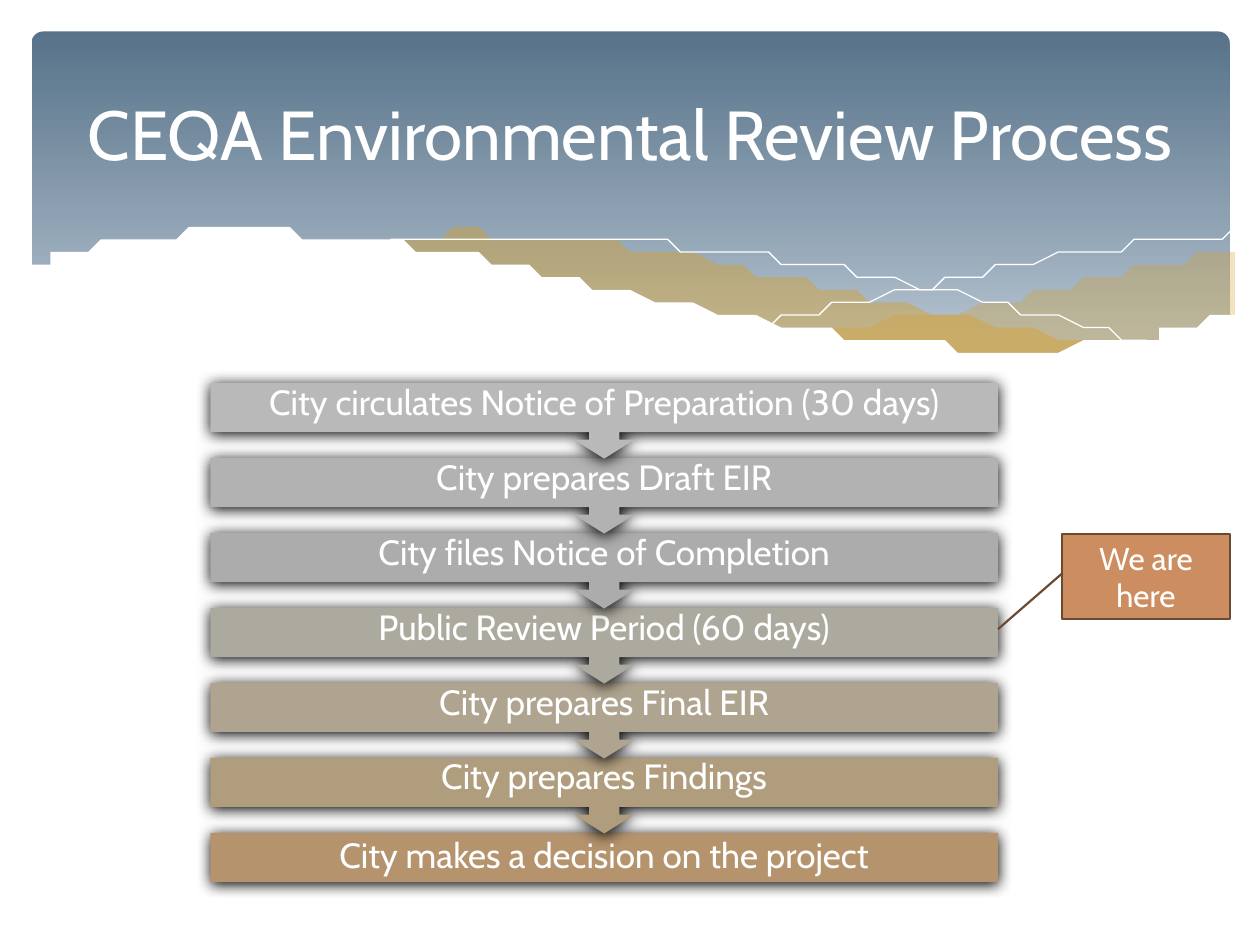
import lxml.etree
import pptx
import pptx.dml.color
import pptx.enum.shapes
import pptx.enum.text
import pptx.oxml.ns
import pptx.util

RGBColor = pptx.dml.color.RGBColor
Shape = pptx.enum.shapes.MSO_SHAPE

WHITE = RGBColor(0xFF, 0xFF, 0xFF)
SKY_TOP = RGBColor(0x57, 0x72, 0x89)
SKY_BOTTOM = RGBColor(0xB2, 0xC1, 0xCE)
GOLD = RGBColor(0xDC, 0x9E, 0x1F)
CALLOUT_FILL = RGBColor(0xCC, 0x8E, 0x60)
CALLOUT_LINE = RGBColor(0x6B, 0x4A, 0x32)

# The grid has 100 columns and 75 rows of 0.1 inch
COLUMNS, ROWS = 100, 75
UNIT = pptx.util.Inches(0.1)

STEPS = [
    ("City circulates Notice of Preparation (30 days)", RGBColor(0xB9, 0xB9, 0xB9)),
    ("City prepares Draft EIR", RGBColor(0xB2, 0xB2, 0xB2)),
    ("City files Notice of Completion", RGBColor(0xAC, 0xAC, 0xAC)),
    ("Public Review Period (60 days)", RGBColor(0xAC, 0xA9, 0x9E)),
    ("City prepares Final EIR", RGBColor(0xAE, 0xA4, 0x8F)),
    ("City prepares Findings", RGBColor(0xB0, 0x9D, 0x7E)),
    ("City makes a decision on the project", RGBColor(0xB4, 0x93, 0x6D)),
]
STEP_LEFT, STEP_TOP, STEP_WIDTH = 16.7, 30.4, 62.5
STEP_PITCH, STEP_HEIGHT, BOX_HEIGHT = 5.95, 6, 3.9

# Knots of the wave curves, in columns and rows
RIGHT_BAND_TOP = [(97.6, 20), (92.1, 21), (86.1, 22.3), (77.9, 24.2), (66.1, 26.5)]
RIGHT_BAND_BOTTOM = [(66.1, 26.5), (73.2, 27.4), (80.3, 27.8), (87.2, 27.4),
                     (92.8, 26.3), (97.6, 24.7)]
LEFT_BAND_TOP = [(89.3, 27.3), (80.7, 26), (70.6, 24), (62.9, 22.2), (55.5, 20.5),
                 (48.9, 19.4), (42, 18.7), (36.1, 18.5), (28.6, 19.1)]
LEFT_BAND_BOTTOM = [(28.6, 19.1), (36.2, 20.3), (44.9, 22.2), (53, 24), (61.8, 25.8),
                    (69.5, 27), (77.3, 27.7), (83.8, 27.8), (89.3, 27.3)]
FALLING_LINE = [(30.9, 19.5), (36.3, 18.9), (43.3, 18.7), (51, 19.2), (60.8, 20.4),
                (69.5, 21.9), (79.5, 24.1), (90.7, 27.2)]
RISING_LINE = [(61.3, 25.7), (69.5, 23.5), (77.6, 21.6), (86.6, 19.9), (92.4, 19),
               (97.5, 18.5)]
GROUND_EDGE = [(2.3, 21.3), (5.9, 19.9), (11.9, 18.7), (19.3, 18.4), (27.1, 18.8),
               (36.5, 20.2), (44.7, 22), (52.9, 23.9), (60.3, 25.4), (68.8, 26.8),
               (76.1, 27.5), (82.3, 27.7), (88.7, 27.1), (93, 26.2), (97.7, 24.6)]
GROUND_CORNERS = [(97.7, 32.9), (2.3, 32.9)]


def smooth(knots, parts=6):
    """Sample a Catmull-Rom curve through the knots."""
    padded = [knots[0], *knots, knots[-1]]
    points = [knots[0]]
    for a, b, c, d in zip(padded, padded[1:], padded[2:], padded[3:]):
        for step in range(1, parts + 1):
            t = step / parts
            points.append(tuple(
                q + t * ((r - p) + t * ((2 * p - 5 * q + 4 * r - s)
                                        + t * (3 * q - p - 3 * r + s))) / 2
                for p, q, r, s in zip(a, b, c, d)))
    return points


def add_xml(parent, tag, **attributes):
    return lxml.etree.SubElement(parent, pptx.oxml.ns.qn(tag), attributes)


class SlideBuilder:
    font = "Cabin"

    def __init__(self, presentation):
        self.slide = presentation.slides.add_slide(presentation.slide_layouts[5])
        self.shapes = self.slide.shapes

    def place(self, shape, left, top, width, height):
        shape.left, shape.top = round(left * UNIT), round(top * UNIT)
        shape.width, shape.height = round(width * UNIT), round(height * UNIT)

    def set_text(self, shape, text, size):
        frame = shape.text_frame
        frame.text = text
        frame.word_wrap = True
        frame.vertical_anchor = pptx.enum.text.MSO_ANCHOR.MIDDLE
        paragraph = frame.paragraphs[0]
        paragraph.alignment = pptx.enum.text.PP_ALIGN.CENTER
        paragraph.font.name = self.font
        paragraph.font.size = pptx.util.Pt(size)
        paragraph.font.color.rgb = WHITE
        return paragraph

    def title(self, text, *box):
        title = self.shapes.title
        self.place(title, *box)
        self.set_text(title, text, 39.6)
        # Bring the title in front of the backdrop
        self.shapes._spTree.append(title._element)

    def box(self, kind, position, adjustments=()):
        shape = self.shapes.add_shape(kind, 0, 0, 0, 0)
        self.place(shape, *position)
        for index, value in enumerate(adjustments):
            shape.adjustments[index] = value
        shape.shadow.inherit = False
        shape.line.fill.background()
        return shape

    def gradient_panel(self, *position):
        fill = self.box(Shape.ROUNDED_RECTANGLE, position, [0.034]).fill
        fill.gradient()
        fill.gradient_angle = 270
        for stop, color, share in zip(fill.gradient_stops, (SKY_TOP, SKY_BOTTOM), (0, 0.9)):
            stop.color.rgb = color
            stop.position = share

    def outline(self, points, closed):
        builder = self.shapes.build_freeform(*points[0], scale=UNIT)
        builder.add_line_segments(points[1:], close=closed)
        shape = builder.convert_to_shape()
        shape.shadow.inherit = False
        return shape

    def area(self, points, color, opacity=100):
        shape = self.outline(points, True)
        shape.line.fill.background()
        shape.fill.solid()
        shape.fill.fore_color.rgb = color
        if opacity < 100:
            color_node = shape._element.spPr.find(".//" + pptx.oxml.ns.qn("a:srgbClr"))
            add_xml(color_node, "a:alpha", val=str(opacity * 1000))

    def hairline(self, knots):
        shape = self.outline(smooth(knots), False)
        shape.fill.background()
        shape.line.color.rgb = WHITE
        shape.line.width = 0

    def step(self, text, color, top, last):
        if last:
            shape = self.box(Shape.RECTANGLE, (STEP_LEFT, top, STEP_WIDTH, BOX_HEIGHT))
        else:
            shape = self.box(Shape.DOWN_ARROW_CALLOUT,
                             (STEP_LEFT, top, STEP_WIDTH, STEP_HEIGHT),
                             [0.4, 0.4, 0.25, BOX_HEIGHT / STEP_HEIGHT])
        shape.fill.solid()
        shape.fill.fore_color.rgb = color
        self.set_text(shape, text, 20).line_spacing = 0.9
        frame = shape.text_frame
        frame.margin_left = frame.margin_right = frame.margin_top = pptx.util.Inches(0.12)
        frame.margin_bottom = pptx.util.Inches(0.12 if last else 0.18)
        effects = shape._element.spPr.find(pptx.oxml.ns.qn("a:effectLst"))
        shadow = add_xml(effects, "a:outerShdw", blurRad=str(pptx.util.Pt(8.5)),
                         dist=str(pptx.util.Pt(1)), dir="5400000", rotWithShape="0")
        add_xml(shadow, "a:srgbClr", val="000000")

    def callout(self, text, position, pointer):
        shape = self.box(Shape.LINE_CALLOUT_1, position, pointer)
        shape.fill.solid()
        shape.fill.fore_color.rgb = CALLOUT_FILL
        shape.line.color.rgb = CALLOUT_LINE
        shape.line.width = pptx.util.Pt(1.25)
        self.set_text(shape, text, 18)


def main():
    presentation = pptx.Presentation()
    presentation.slide_width = COLUMNS * UNIT
    presentation.slide_height = ROWS * UNIT
    builder = SlideBuilder(presentation)

    # Backdrop with waves
    builder.gradient_panel(2.5, 2.5, 95.1, 27)
    builder.area(smooth(RIGHT_BAND_TOP) + smooth(RIGHT_BAND_BOTTOM), GOLD, 29)
    builder.area(smooth(LEFT_BAND_TOP) + smooth(LEFT_BAND_BOTTOM), GOLD, 40)
    builder.hairline(FALLING_LINE)
    builder.hairline(RISING_LINE)
    builder.area(smooth(GROUND_EDGE) + GROUND_CORNERS, WHITE)

    builder.title("CEQA Environmental Review Process", 5, 3.7, 90, 13.7)

    # Process steps, last one first so that each arrow overlaps the next box
    for index, (text, color) in reversed(list(enumerate(STEPS))):
        builder.step(text, color, STEP_TOP + index * STEP_PITCH, index == len(STEPS) - 1)

    # Marker of the current step
    builder.callout("We are here", (84.3, 42.4, 13.3, 6.7), [0.465, 0, 1.125, -0.383])

    presentation.save("out.pptx")


if __name__ == "__main__":
    main()
